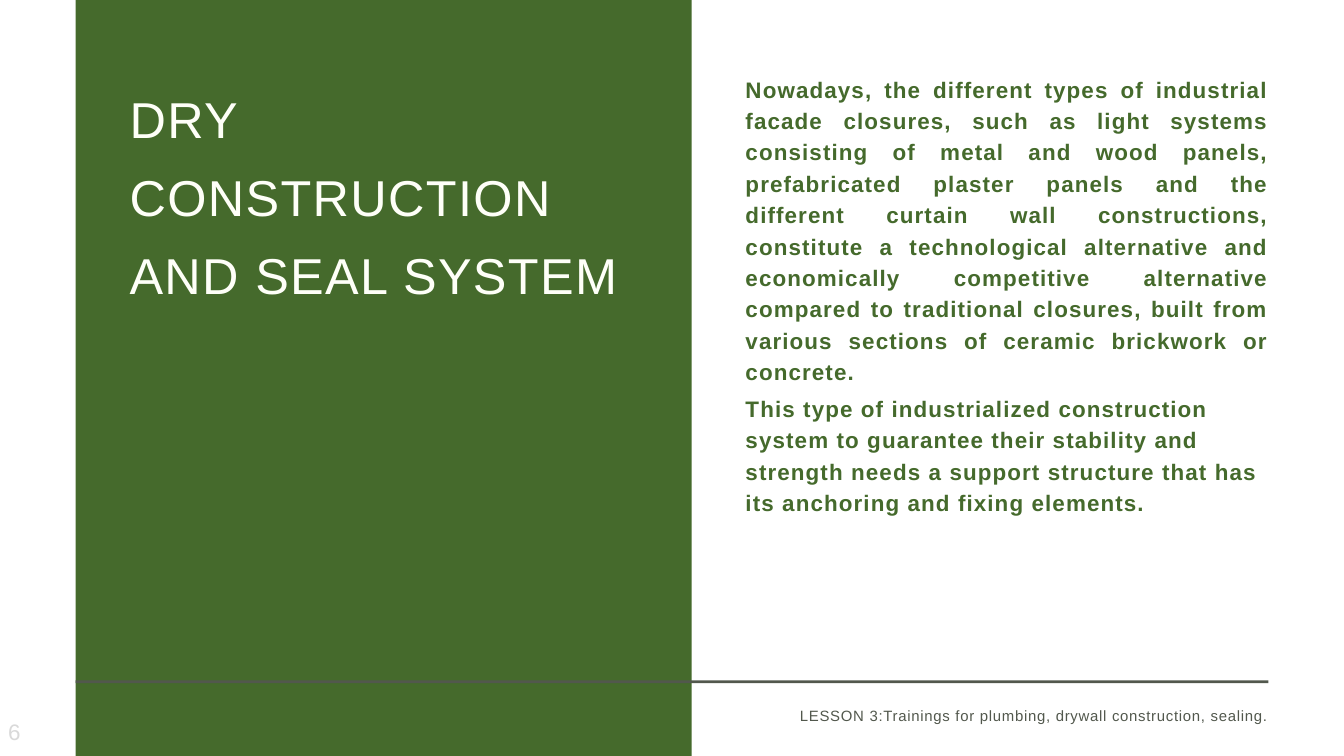
from pptx import Presentation
from pptx.dml.color import RGBColor
from pptx.enum.shapes import MSO_SHAPE as Shape
from pptx.enum.text import MSO_ANCHOR as Anchor, MSO_AUTO_SIZE as AutoSize, PP_ALIGN as Align
from pptx.oxml.xmlchemy import OxmlElement
from pptx.util import Pt

EMU_PER_PX = 9525
GREEN = RGBColor(0x45, 0x6A, 0x2C)
GREY = RGBColor(0x52, 0x58, 0x4D)
PALE = RGBColor(0xD9, 0xD9, 0xD9)
CREAM = RGBColor(0xFE, 0xFF, 0xF8)

TITLE = "DRY CONSTRUCTION AND SEAL SYSTEM"
FACADES = (
    "Nowadays, the different types of industrial facade closures, such as light systems "
    "consisting of metal and wood panels, prefabricated plaster panels and the different "
    "curtain wall constructions, constitute a technological alternative and economically "
    "competitive alternative compared to traditional closures, built from various sections "
    "of ceramic brickwork or concrete."
)
SUPPORT = (
    "This type of industrialized construction system to guarantee their stability and "
    "strength needs a support structure that has its anchoring and fixing elements."
)
LESSON = "LESSON 3:Trainings for plumbing, drywall construction, sealing."


def px(*lengths):
    return [length * EMU_PER_PX for length in lengths]


def add_bar(page, place, color):
    bar = page.shapes.add_shape(Shape.RECTANGLE, *px(*place))
    bar.shadow.inherit = False
    bar.fill.solid()
    bar.fill.fore_color.rgb = color
    bar.line.fill.background()
    return bar


def add_box(page, place):
    return page.shapes.add_textbox(*px(*place))


def place_frame(box, place, inset=(0, 0), anchor=Anchor.TOP):
    box.left, box.top, box.width, box.height = px(*place)
    frame = box.text_frame
    frame.word_wrap = True
    frame.auto_size = AutoSize.NONE
    frame.vertical_anchor = anchor
    frame.margin_left = frame.margin_right = Pt(inset[0])
    frame.margin_top = frame.margin_bottom = Pt(inset[1])
    return frame


def remove_bullet(para):
    properties = para._p.get_or_add_pPr()
    properties.set("marL", "0")
    properties.set("indent", "0")
    properties.append(OxmlElement("a:buNone"))


def write(para, text, size, color, tracking, leading=None, after=0, align=Align.LEFT, bold=False):
    span = para.add_run()
    span.text = text
    span._r.get_or_add_rPr().set("spc", str(round(tracking * 100)))
    para.alignment = align
    para.space_before = Pt(0)
    para.space_after = Pt(after)
    if leading:
        para.line_spacing = Pt(leading)
    para.font.name = "Arial"
    para.font.size = Pt(size)
    para.font.bold = bold
    para.font.color.rgb = color


def main():
    deck = Presentation()
    deck.slide_width, deck.slide_height = px(1920, 1080)
    page = deck.slides.add_slide(deck.slide_layouts[1])
    title, body = page.placeholders

    panel = add_bar(page, (108, -36, 880, 1150), GREEN)
    rule = add_bar(page, (108, 972, 1704, 4), GREY)
    for bar in (rule, panel):
        page.shapes._spTree.insert(2, bar._element)

    frame = place_frame(title, (185, 101, 726, 457))
    write(frame.paragraphs[0], TITLE, 54, CREAM, 1.5, leading=83.7, after=6)

    place = (2, 1026, 224, 38)
    frame = place_frame(add_box(page, place), place, inset=(7.2, 3.6), anchor=Anchor.MIDDLE)
    write(frame.paragraphs[0], "6", 24, PALE, 1.2)

    frame = place_frame(body, (1065, 102, 747, 750))
    paras = [frame.paragraphs[0], frame.add_paragraph()]
    for para, text, align in zip(paras, (FACADES, SUPPORT), (Align.JUSTIFY, Align.LEFT)):
        write(para, text, 24, GREEN, 1.2, leading=33.6, after=6, align=align, bold=True)
        remove_bullet(para)

    place = (1014, 1005, 798, 58)
    frame = place_frame(add_box(page, place), place)
    write(frame.paragraphs[0], LESSON, 16, GREY, 0.8, leading=22.4, align=Align.RIGHT)

    deck.save("out.pptx")


if __name__ == "__main__":
    main()
